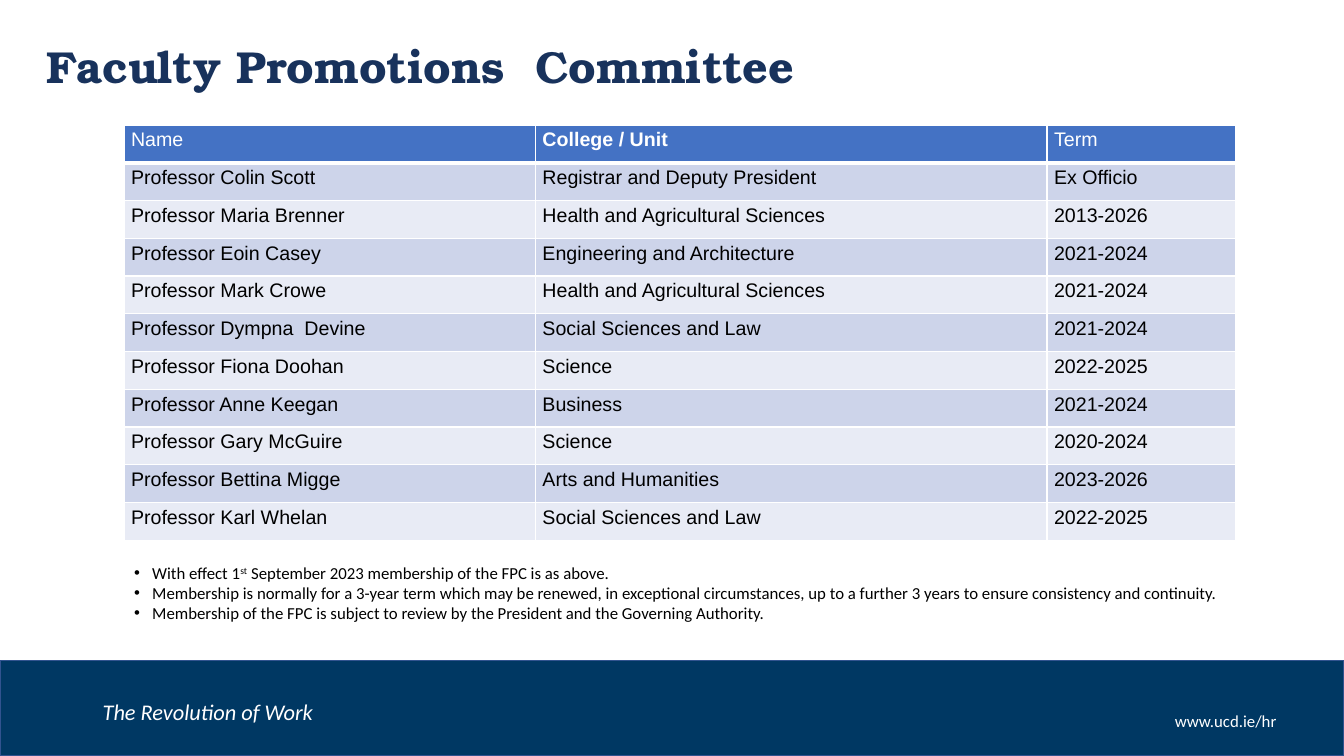
from lxml.etree import SubElement
from pptx import Presentation
from pptx.dml.color import RGBColor
from pptx.enum.shapes import MSO_SHAPE
from pptx.enum.text import MSO_ANCHOR, MSO_AUTO_SIZE, PP_ALIGN
from pptx.oxml.ns import qn
from pptx.util import Inches, Pt

NAVY = RGBColor(0x00, 0x38, 0x63)
TITLE_NAVY = RGBColor(0x18, 0x32, 0x5C)
OUTLINE = RGBColor(0x31, 0x53, 0x8F)
HEADER_BLUE = RGBColor(0x44, 0x72, 0xC4)
BAND_DARK = RGBColor(0xCD, 0xD4, 0xEA)
BAND_LIGHT = RGBColor(0xE8, 0xEB, 0xF5)
WHITE = RGBColor(0xFF, 0xFF, 0xFF)
BLACK = RGBColor(0x00, 0x00, 0x00)

HEADINGS = ("Name", "College / Unit", "Term")
BOLD_HEADING = "College / Unit"
MEMBERS = (
    ("Professor Colin Scott", "Registrar and Deputy President", "Ex Officio"),
    ("Professor Maria Brenner", "Health and Agricultural Sciences", "2013-2026"),
    ("Professor Eoin Casey", "Engineering and Architecture", "2021-2024"),
    ("Professor Mark Crowe", "Health and Agricultural Sciences", "2021-2024"),
    ("Professor Dympna  Devine", "Social Sciences and Law", "2021-2024"),
    ("Professor Fiona Doohan", "Science", "2022-2025"),
    ("Professor Anne Keegan", "Business", "2021-2024"),
    ("Professor Gary McGuire", "Science", "2020-2024"),
    ("Professor Bettina Migge", "Arts and Humanities", "2023-2026"),
    ("Professor Karl Whelan", "Social Sciences and Law", "2022-2025"),
)
COLUMN_SHARES = (0.37, 0.46, 0.17)
NOTES = (
    (("With effect 1", False), ("st", True),
     (" September 2023 membership of the FPC is as above.", False)),
    (("Membership is normally for a 3-year term which may be renewed, in exceptional "
      "circumstances, up to a further 3 years to ensure consistency and continuity.", False),),
    (("Membership of the FPC is subject to review by the President and the "
      "Governing Authority.", False),),
)


def set_font(para, name, size, color, bold=False, italic=False):
    font = para.font
    font.name = name
    font.size = Pt(size)
    font.color.rgb = color
    font.bold = bold
    font.italic = italic


def place(shape, left, top, width, height):
    shape.left, shape.top = Inches(left), Inches(top)
    shape.width, shape.height = Inches(width), Inches(height)


def add_title(page, left, top, width, height):
    title = page.shapes.title
    place(title, left, top, width, height)
    frame = title.text_frame
    frame.text = "Faculty Promotions  Committee"
    frame.vertical_anchor = MSO_ANCHOR.TOP
    frame.auto_size = MSO_AUTO_SIZE.NONE
    para = frame.paragraphs[0]
    para.alignment = PP_ALIGN.LEFT
    set_font(para, "TeX Gyre Bonum", 32, TITLE_NAVY, bold=True)


def add_borders(cell, bottom_width):
    properties = cell._tc.get_or_add_tcPr()
    for side in ("lnL", "lnR", "lnT", "lnB"):
        width = bottom_width if side == "lnB" else 1
        line = SubElement(properties, qn(f"a:{side}"), w=str(Pt(width)))
        fill = SubElement(line, qn("a:solidFill"))
        SubElement(fill, qn("a:srgbClr"), val=str(WHITE))


def add_members(page, left, top, width, height):
    rows = (HEADINGS,) + MEMBERS
    frame = page.shapes.add_table(len(rows), len(HEADINGS), Inches(left), Inches(top),
                                  Inches(width), Inches(height))
    table = frame.table
    for column, share in zip(table.columns, COLUMN_SHARES):
        column.width = Inches(width * share)
    for row_index, values in enumerate(rows):
        header = row_index == 0
        band = BAND_DARK if row_index % 2 else BAND_LIGHT
        for column_index, value in enumerate(values):
            cell = table.cell(row_index, column_index)
            cell.margin_left = cell.margin_right = Inches(0.07)
            cell.margin_top = cell.margin_bottom = Inches(0.04)
            add_borders(cell, 3 if header else 1)
            cell.fill.solid()
            cell.fill.fore_color.rgb = HEADER_BLUE if header else band
            cell.text = value
            set_font(cell.text_frame.paragraphs[0], "Arial", 14,
                     WHITE if header else BLACK, bold=value == BOLD_HEADING)


def add_bullet(para):
    properties = para._p.get_or_add_pPr()
    properties.set("marL", str(Inches(0.18)))
    properties.set("indent", str(Inches(-0.18)))
    color = SubElement(properties, qn("a:buClr"))
    SubElement(color, qn("a:srgbClr"), val=str(BLACK))
    SubElement(properties, qn("a:buFont"), typeface="Arial")
    SubElement(properties, qn("a:buChar"), char="•")


def add_notes(page, left, top, width, height):
    body = page.placeholders[1]
    place(body, left, top, width, height)
    frame = body.text_frame
    frame.auto_size = MSO_AUTO_SIZE.NONE
    for index, pieces in enumerate(NOTES):
        para = frame.add_paragraph() if index else frame.paragraphs[0]
        para.alignment = PP_ALIGN.JUSTIFY
        para.space_before = Pt(0)
        add_bullet(para)
        set_font(para, "Calibri", 12, BLACK)
        for text, raised in pieces:
            span = para.add_run()
            span.text = text
            if raised:
                span._r.get_or_add_rPr().set("baseline", "30000")


def add_label(page, text, left, top, width, size, alignment, italic=False):
    box = page.shapes.add_textbox(Inches(left), Inches(top), Inches(width), Inches(0.4))
    frame = box.text_frame
    frame.word_wrap = True
    frame.vertical_anchor = MSO_ANCHOR.MIDDLE
    frame.text = text
    para = frame.paragraphs[0]
    para.alignment = alignment
    set_font(para, "Calibri", size, WHITE, italic=italic)


def add_footer(page, left, top, width, height):
    band = page.shapes.add_shape(MSO_SHAPE.RECTANGLE, Inches(left), Inches(top),
                                 Inches(width), Inches(height))
    band.shadow.inherit = False
    band.fill.solid()
    band.fill.fore_color.rgb = NAVY
    band.line.color.rgb = OUTLINE
    band.line.width = Pt(1)
    add_label(page, "www.ucd.ie/hr", left + width - 3.75, top + 0.4, 3.18, 12, PP_ALIGN.RIGHT)
    add_label(page, "The Revolution of Work", left + 0.92, top + 0.31, 3, 16,
              PP_ALIGN.LEFT, italic=True)


def main():
    deck = Presentation()
    deck.slide_width, deck.slide_height = Inches(13.33), Inches(7.5)
    page = deck.slides.add_slide(deck.slide_layouts[1])
    add_footer(page, 0, 6.55, 13.33, 0.95)
    add_notes(page, 1.23, 5.53, 11.23, 0.71)
    add_members(page, 1.23, 1.24, 11.03, 4.12)
    add_title(page, 0.36, 0.33, 11.68, 0.64)
    deck.save("out.pptx")


if __name__ == "__main__":
    main()
